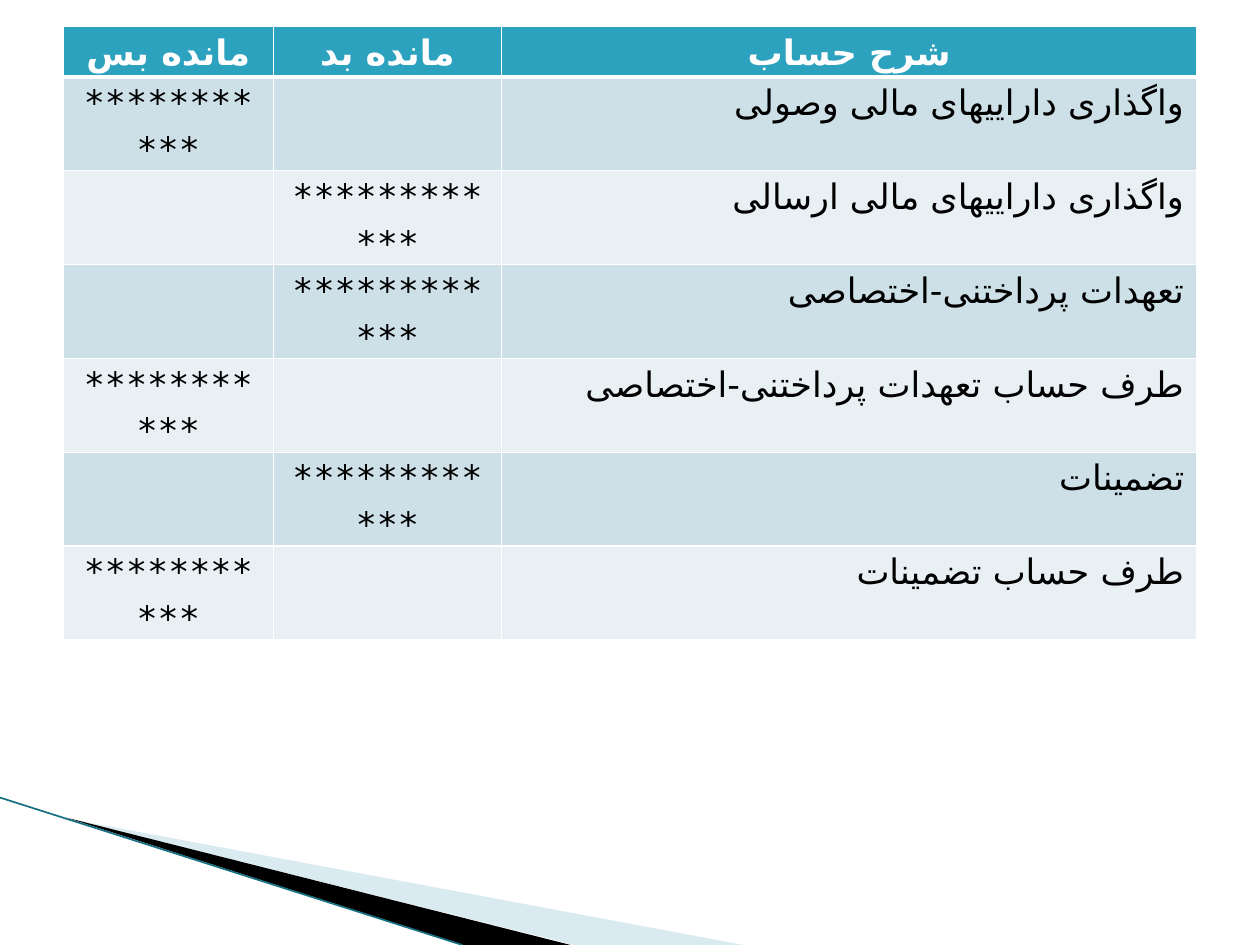
from lxml.etree import SubElement
from pptx import Presentation
from pptx.dml.color import RGBColor
from pptx.enum.shapes import MSO_CONNECTOR
from pptx.enum.text import PP_ALIGN as Align
from pptx.oxml import parse_xml
from pptx.oxml.ns import nsdecls, qn
from pptx.util import Inches, Pt

COLORS = {
    "header": "2DA2BF", "band": "CDE0E8", "plain": "E8F0F4", "white": "FFFFFF",
    "black": "000000", "pale": "A0CBDC", "edge": "147082",
}
FONT, PERSIAN_FONT = "DejaVu Sans Mono", "DejaVu Sans"
CREDIT, DEBIT = "*" * 11, "*" * 12
ROWS = [
    ("مانده بس", "مانده بد", "شرح حساب"),
    (CREDIT, "", "واگذاری داراییهای مالی وصولی"),
    ("", DEBIT, "واگذاری داراییهای مالی ارسالی"),
    ("", DEBIT, "تعهدات پرداختنی-اختصاصی"),
    (CREDIT, "", "طرف حساب تعهدات پرداختنی-اختصاصی"),
    ("", DEBIT, "تضمینات"),
    (CREDIT, "", "طرف حساب تضمینات"),
]
COLUMN_WIDTHS = [1.67, 1.81, 5.52]
HEADER_HEIGHT, BODY_HEIGHT = 0.4, 0.745
TABLE_LEFT, TABLE_TOP = 0.5, 0.21
WEDGES = [
    ("pale", 40, [(0.55, 6.5), (5.9, 7.5), (4.56, 7.5)]),
    ("black", 100, [(0.53, 6.49), (4.53, 7.5), (3.68, 7.5)]),
]
EDGE = [(0, 6.33), (3.67, 7.5)]


def rgb(name):
    return RGBColor.from_string(COLORS[name])


def add_wedge(slide, color, opacity, points):
    corners = [(Inches(x), Inches(y)) for x, y in points]
    builder = slide.shapes.build_freeform(*corners[0])
    builder.add_line_segments(corners[1:], close=True)
    shape = builder.convert_to_shape()
    shape.shadow.inherit = False
    shape.fill.solid()
    shape.fill.fore_color.rgb = rgb(color)
    shape.line.fill.background()
    if opacity < 100:
        fill_color = shape.fill._xPr.find(qn("a:solidFill"))[0]
        SubElement(fill_color, qn("a:alpha"), val=str(opacity * 1000))


def add_edge(slide, start, end):
    ends = [Inches(value) for value in (*start, *end)]
    edge = slide.shapes.add_connector(MSO_CONNECTOR.STRAIGHT, *ends)
    edge.line.color.rgb = rgb("edge")
    edge.line.width = Pt(0.95)
    SubElement(edge._element.spPr, qn("a:effectLst"))


def set_borders(cell, bottom_width, top_width):
    widths = {"lnL": 1, "lnR": 1, "lnT": top_width, "lnB": bottom_width}
    properties = cell._tc.get_or_add_tcPr()
    for index, (side, width) in enumerate(widths.items()):
        properties.insert(index, parse_xml(
            f'<a:{side} {nsdecls("a")} w="{Pt(width)}"><a:solidFill>'
            f'<a:srgbClr val="{COLORS["white"]}"/></a:solidFill></a:{side}>'))


def fill_cell(cell, text, row, column):
    header = row == 0
    cell.fill.solid()
    cell.fill.fore_color.rgb = rgb("header" if header else "band" if row % 2 else "plain")
    set_borders(cell, 3 if header else 1, 3 if row == 1 else 1)
    cell.margin_top = cell.margin_bottom = 0
    cell.text = text
    paragraph = cell.text_frame.paragraphs[0]
    paragraph.alignment = Align.RIGHT if column == 2 and not header else Align.CENTER
    paragraph.line_spacing = 1.15
    paragraph._p.get_or_add_pPr().set("rtl", "1")
    font = paragraph.font
    font.size = Pt(20)
    font.bold = header
    font.color.rgb = rgb("white" if header else "black")
    font.name = FONT
    script_font = FONT if text in (CREDIT, DEBIT) else PERSIAN_FONT
    SubElement(font._rPr, qn("a:cs"), typeface=script_font)


def add_account_table(slide):
    heights = [HEADER_HEIGHT] + [BODY_HEIGHT] * (len(ROWS) - 1)
    table = slide.shapes.add_table(
        len(ROWS), len(COLUMN_WIDTHS), Inches(TABLE_LEFT), Inches(TABLE_TOP),
        Inches(sum(COLUMN_WIDTHS)), Inches(sum(heights))).table
    for column, width in zip(table.columns, COLUMN_WIDTHS):
        column.width = Inches(width)
    for row, texts in enumerate(ROWS):
        table.rows[row].height = Inches(heights[row])
        for column, text in enumerate(texts):
            fill_cell(table.cell(row, column), text, row, column)


def main():
    presentation = Presentation()
    presentation.slide_width, presentation.slide_height = Inches(10), Inches(7.5)
    slide = presentation.slides.add_slide(presentation.slide_layouts[6])
    for wedge in WEDGES:
        add_wedge(slide, *wedge)
    add_edge(slide, *EDGE)
    add_account_table(slide)
    presentation.save("out.pptx")


if __name__ == "__main__":
    main()
